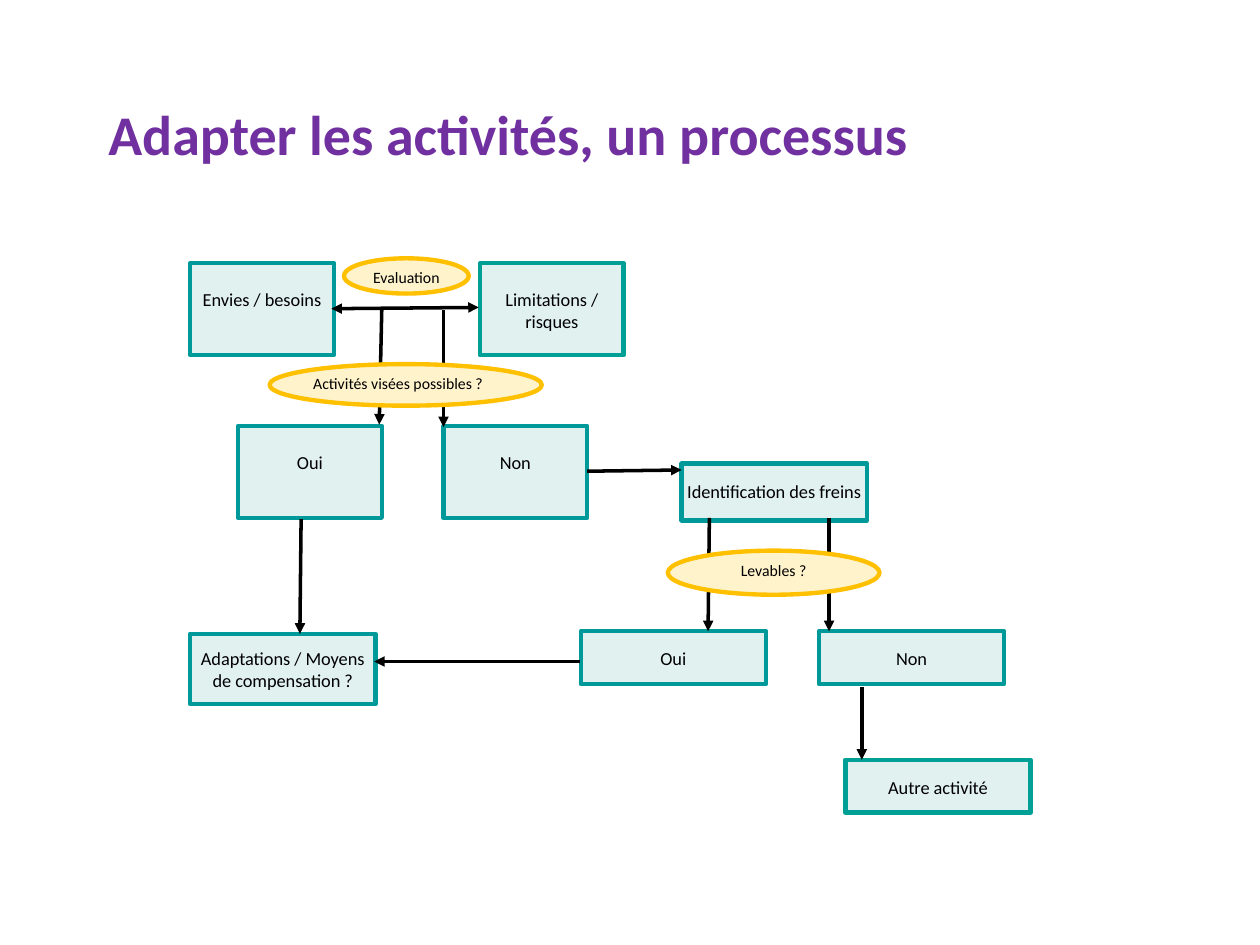
import pptx
import pptx.util
import pptx.dml.color
import pptx.enum.shapes
import pptx.enum.text
import pptx.oxml
from pptx.util import Inches

COLORS = {
    "title": "7030A0", "text": "000000", "arrow": "000000",
    "box": "E1F1F0", "box_line": "009999", "box_line_green": "00A097",
    "question": "FFF3CC", "question_line": "FFC000",
}
FONT = "Calibri"
SHAPES = pptx.enum.shapes.MSO_SHAPE
ALIGN = pptx.enum.text.PP_ALIGN
ANCHOR = pptx.enum.text.MSO_ANCHOR


def add_span(para, text, size, color):
    """Add one Calibri run to a paragraph."""
    span = para.add_run()
    span.text = text
    span.font.name = FONT
    span.font.size = pptx.util.Pt(size)
    span.font.color.rgb = pptx.dml.color.RGBColor.from_string(COLORS[color])
    return span


def add_node(kind, text, place, size, fill, line, top_inset, align):
    """Add a filled, outlined shape with text set from its top edge."""
    node = page.shapes.add_shape(kind, *[Inches(value) for value in place])
    node.shadow.inherit = False
    node.fill.solid()
    node.fill.fore_color.rgb = pptx.dml.color.RGBColor.from_string(COLORS[fill])
    node.line.color.rgb = pptx.dml.color.RGBColor.from_string(COLORS[line])
    node.line.width = pptx.util.Pt(2.5)
    frame = node.text_frame
    frame.word_wrap = True
    frame.vertical_anchor = ANCHOR.TOP
    frame.margin_left = frame.margin_right = frame.margin_bottom = Inches(0.03)
    frame.margin_top = Inches(top_inset)
    para = frame.paragraphs[0]
    para.alignment = align
    add_span(para, text, size, "text")


deck = pptx.Presentation()
deck.slide_width = Inches(10)
deck.slide_height = Inches(7.5)
page = deck.slides.add_slide(deck.slide_layouts[5])

title = page.shapes.title
title.left, title.top = Inches(0.76), Inches(0.71)
title.width, title.height = Inches(7.42), Inches(0.7)
title.text_frame.vertical_anchor = ANCHOR.MIDDLE
title_para = title.text_frame.paragraphs[0]
title_para.alignment = ALIGN.LEFT
add_span(title_para, "Adapter les activités, un processus", 32, "title").font.bold = True

# Steps: text, left, top, width, height, top inset, outline
steps = [
    ("Envies / besoins", 1.51, 2.09, 1.14, 0.73, 0.2, "box_line"),
    ("Limitations / risques", 3.81, 2.09, 1.14, 0.73, 0.2, "box_line_green"),
    ("Oui", 1.89, 3.38, 1.14, 0.73, 0.2, "box_line"),
    ("Non", 3.52, 3.38, 1.14, 0.73, 0.2, "box_line"),
    ("Identification des freins", 5.41, 3.68, 1.47, 0.45, 0.13, "box_line"),
    ("Adaptations / Moyens de compensation ?", 1.51, 5.03, 1.47, 0.56, 0.11, "box_line"),
    ("Oui", 4.61, 5.01, 1.47, 0.42, 0.13, "box_line"),
    ("Non", 6.5, 5.01, 1.47, 0.42, 0.13, "box_line"),
    ("Autre activité", 6.71, 6.03, 1.47, 0.42, 0.13, "box_line_green"),
]
for text, left, top, width, height, inset, outline in steps:
    add_node(SHAPES.RECTANGLE, text, (left, top, width, height), 10.5,
             "box", outline, inset, ALIGN.CENTER)

# Arrows: start x, start y, end x, end y, ends that carry a head
arrows = [
    (2.63, 2.45, 3.8, 2.44, ("headEnd", "tailEnd")),
    (3.03, 2.46, 3.01, 3.37, ("tailEnd",)),
    (3.52, 2.46, 3.52, 3.39, ("tailEnd",)),
    (4.66, 3.74, 5.41, 3.73, ("tailEnd",)),
    (2.39, 4.12, 2.38, 5.03, ("tailEnd",)),
    (5.63, 4.11, 5.62, 5.01, ("tailEnd",)),
    (6.58, 4.11, 6.58, 5.01, ("tailEnd",)),
    (4.6, 5.25, 2.97, 5.25, ("tailEnd",)),
    (6.84, 5.45, 6.84, 6.03, ("tailEnd",)),
]
namespace = 'xmlns:a="http://schemas.openxmlformats.org/drawingml/2006/main"'
for *ends, heads in arrows:
    arrow = page.shapes.add_connector(
        pptx.enum.shapes.MSO_CONNECTOR.STRAIGHT, *[Inches(value) for value in ends])
    arrow.line.color.rgb = pptx.dml.color.RGBColor.from_string(COLORS["arrow"])
    arrow.line.width = pptx.util.Pt(2)
    outline = arrow.line._get_or_add_ln()
    for head in heads:
        outline.append(pptx.oxml.parse_xml(f'<a:{head} {namespace} type="triangle"/>'))
    arrow._element.spPr.append(pptx.oxml.parse_xml(f"<a:effectLst {namespace}/>"))

# Questions lie over the arrows
questions = [
    ("Evaluation", (2.73, 2.05, 0.99, 0.28), ALIGN.CENTER),
    ("Activités visées possibles ?", (2.14, 2.89, 2.16, 0.33), ALIGN.LEFT),
    ("Levables ?", (5.3, 4.37, 1.68, 0.35), ALIGN.CENTER),
]
for text, place, align in questions:
    add_node(SHAPES.OVAL, text, place, 9, "question", "question_line", 0.03, align)

deck.save("out.pptx")
